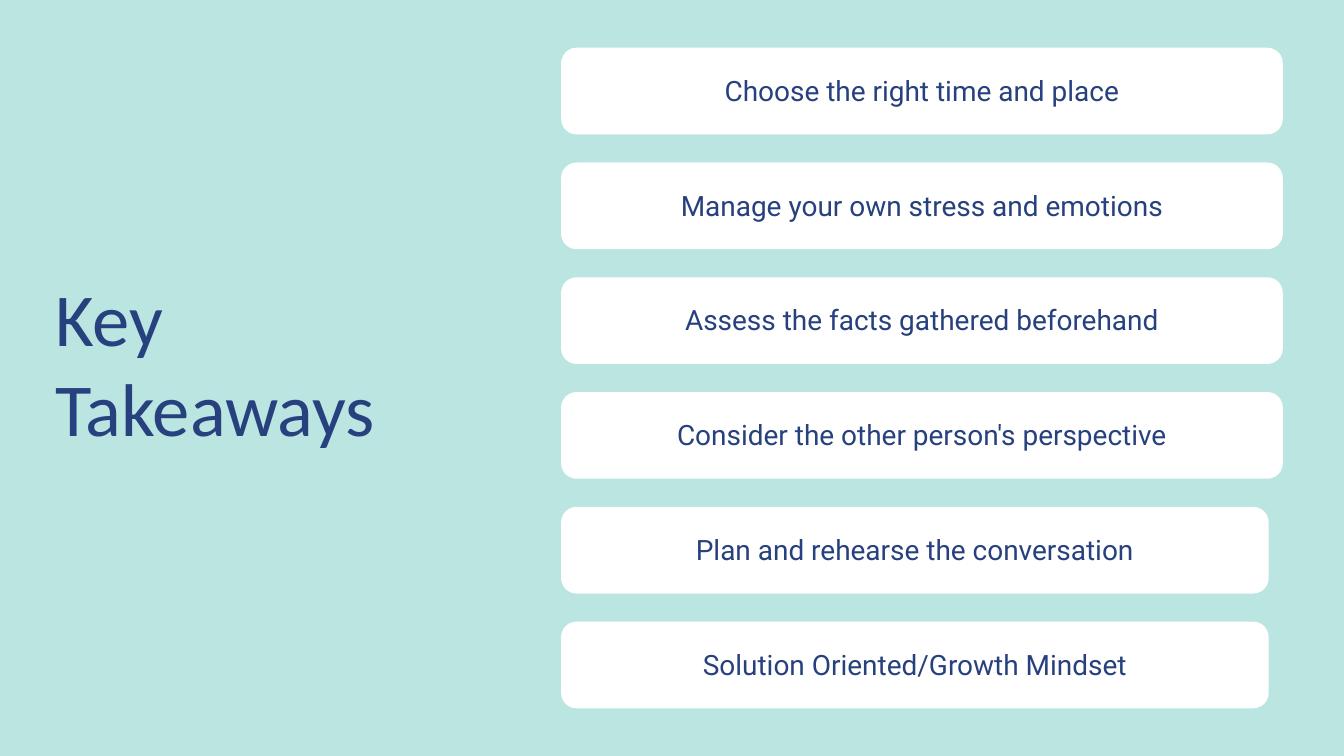
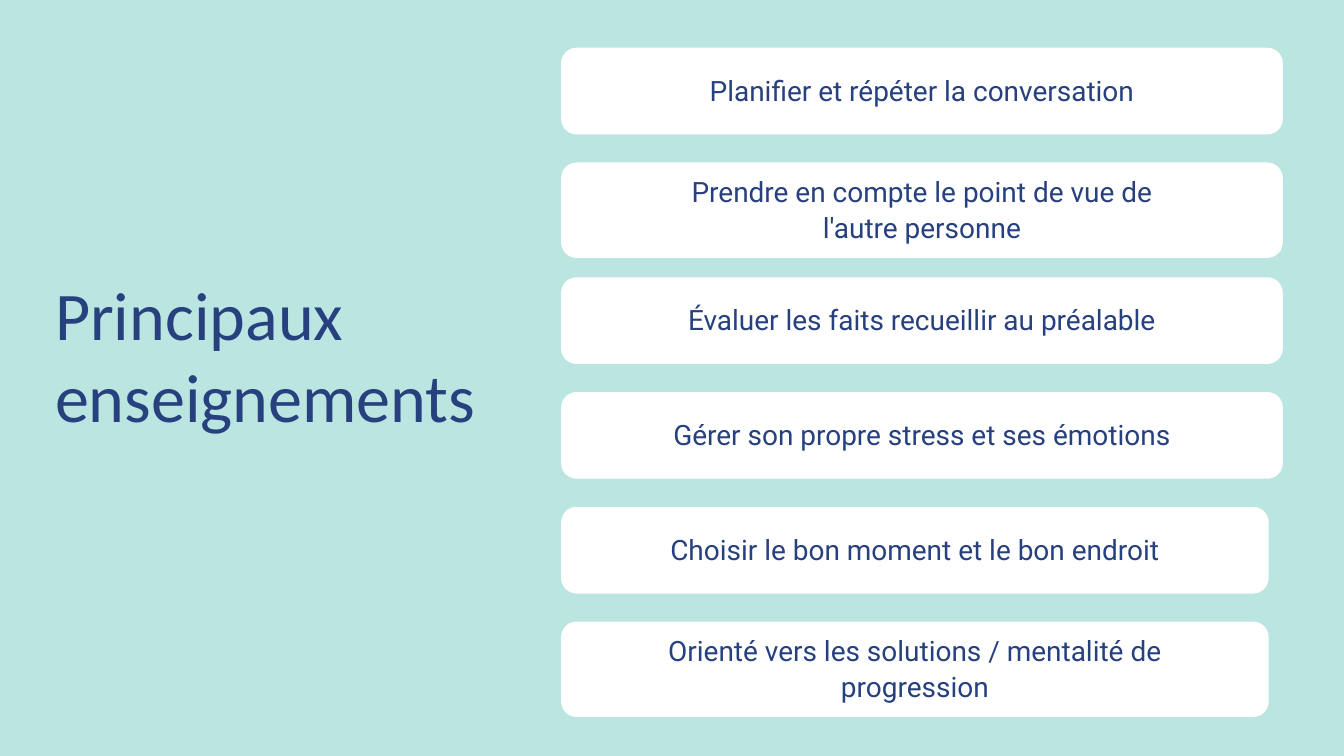
from pptx import Presentation
from pptx.dml import color
from pptx.enum import shapes, text
from pptx.util import Inches, Pt

MINT, NAVY, WHITE = "BBE5E1", "27407E", "FFFFFF"
TITLE_ONLY = 5
CARD_COUNT = 6
FIRST_TOP, LAST_TOP = 0.71, 9.25
PITCH = (LAST_TOP - FIRST_TOP) / (CARD_COUNT - 1)
CARDS_LEFT = 8.35
WIDE, NARROW = 10.74, 10.53
SINGLE, DOUBLE = 1.29, 1.42
CORNER = 0.23

ENGLISH = [
    ("Choose the right time and place", SINGLE),
    ("Manage your own stress and emotions", SINGLE),
    ("Assess the facts gathered beforehand", SINGLE),
    ("Consider the other person's perspective", SINGLE),
    ("Plan and rehearse the conversation", SINGLE),
    ("Solution Oriented/Growth Mindset", SINGLE),
]
FRENCH = [
    ("Planifier et répéter la conversation", SINGLE),
    ("Prendre en compte le point de vue de l'autre personne", DOUBLE),
    ("Évaluer les faits recueillir au préalable", SINGLE),
    ("Gérer son propre stress et ses émotions", SINGLE),
    ("Choisir le bon moment et le bon endroit", SINGLE),
    ("Orienté vers les solutions / mentalité de progression", DOUBLE),
]


def paint(fill, hex_color):
    fill.solid()
    fill.fore_color.rgb = color.RGBColor.from_string(hex_color)


def write(frame, words, font, size, spacing, align, anchor, insets=(0, 0, 0, 0)):
    frame.word_wrap = True
    frame.auto_size = text.MSO_AUTO_SIZE.NONE
    frame.vertical_anchor = anchor
    (frame.margin_left, frame.margin_top,
     frame.margin_right, frame.margin_bottom) = map(Inches, insets)
    frame.text = words
    line = frame.paragraphs[0]
    line.alignment = align
    line.line_spacing = Pt(spacing)
    line.font.name = font
    line.font.size = Pt(size)
    paint(line.font.fill, NAVY)


def place_title(slide, box, words, size):
    title = slide.shapes.title
    title.left, title.top, title.width, title.height = map(Inches, box)
    write(title.text_frame, words, "Calibri", size, size * 1.2,
          text.PP_ALIGN.LEFT, text.MSO_ANCHOR.TOP)


def add_card(slide, box, words):
    card = slide.shapes.add_shape(
        shapes.MSO_SHAPE.ROUNDED_RECTANGLE, *map(Inches, box))
    card.adjustments[0] = CORNER / box[3]
    card.shadow.inherit = False
    paint(card.fill, WHITE)
    card.line.fill.background()
    write(card.text_frame, words, "Roboto", 30, 39,
          text.PP_ALIGN.CENTER, text.MSO_ANCHOR.MIDDLE, (1.48, 0, 1.48, 0.07))


def takeaways_slide(deck, heading, heading_box, heading_size, takeaways):
    slide = deck.slides.add_slide(deck.slide_layouts[TITLE_ONLY])
    place_title(slide, heading_box, heading, heading_size)
    for row, (words, height) in enumerate(takeaways):
        width = WIDE if row < 4 else NARROW
        add_card(slide, (CARDS_LEFT, FIRST_TOP + row * PITCH, width, height), words)


def main():
    deck = Presentation()
    deck.slide_width, deck.slide_height = Inches(20), Inches(11.25)
    paint(deck.slide_master.background.fill, MINT)
    takeaways_slide(deck, "Key Takeaways", (0.82, 4.05, 5.73, 2.68), 80, ENGLISH)
    takeaways_slide(deck, "Principaux enseignements", (0.82, 4.05, 7.07, 2.43), 73, FRENCH)
    deck.save("out.pptx")


if __name__ == "__main__":
    main()
